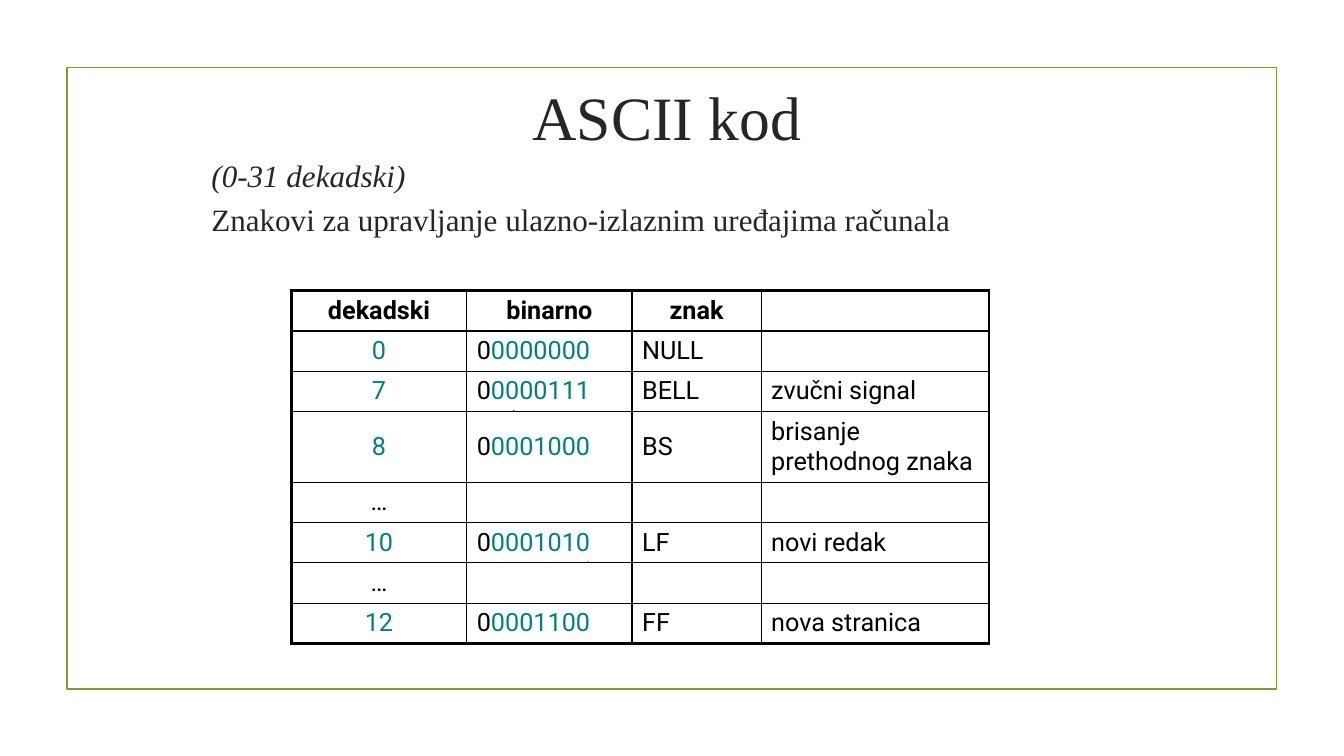
from lxml import etree
from pptx import Presentation
from pptx.dml.color import RGBColor
from pptx.enum.shapes import MSO_SHAPE as Shape
from pptx.enum.text import MSO_ANCHOR as Anchor, PP_ALIGN as Align
from pptx.oxml.ns import qn
from pptx.util import Pt

BLACK, INK, TEAL, OLIVE = "000000", "262626", "008080", "83992A"
SERIF, SANS = "Times New Roman", "Roboto"
COLUMN_WIDTHS = [125.3, 118.1, 92.2, 162.7]
ROW_HEIGHT, TWO_LINE_HEIGHT = 28.4, 50
HEADER = ["dekadski", "binarno", "znak", ""]
CODES = [
    ("0", "00000000", "NULL", ""),
    ("7", "00000111", "BELL", "zvučni signal"),
    ("8", "00001000", "BS", "brisanje prethodnog znaka"),
    ("…", "", "", ""),
    ("10", "00001010", "LF", "novi redak"),
    ("…", "", "", ""),
    ("12", "00001100", "FF", "nova stranica"),
]
SPECKS = [(366.5, 293), (419.8, 401)]


def rgb(value):
    """Turn a hex string into a colour."""
    return RGBColor.from_string(value)


def add_run(paragraph, text, font, size, color, bold=False, italic=False):
    """Append one formatted run to a paragraph."""
    run = paragraph.add_run()
    run.text = text
    run.font.name, run.font.size = font, Pt(size)
    run.font.bold, run.font.italic = bold, italic
    run.font.color.rgb = rgb(color)


def add_rectangle(slide, left, top, width, height, fill=None, line=None):
    """Draw a rectangle with an optional fill and outline."""
    box = slide.shapes.add_shape(Shape.RECTANGLE, Pt(left), Pt(top), Pt(width), Pt(height))
    box.shadow.inherit = False
    if fill:
        box.fill.solid()
        box.fill.fore_color.rgb = rgb(fill)
    else:
        box.fill.background()
    if line:
        box.line.color.rgb = rgb(line)
        box.line.width = Pt(1.25)
    else:
        box.line.fill.background()


def add_text(slide, left, top, width, height, lines, size, align=Align.LEFT, anchor=Anchor.TOP):
    """Place a text box whose lines are (text, italic) pairs."""
    frame = slide.shapes.add_textbox(Pt(left), Pt(top), Pt(width), Pt(height)).text_frame
    frame.word_wrap = True
    frame.vertical_anchor = anchor
    for index, (text, italic) in enumerate(lines):
        paragraph = frame.add_paragraph() if index else frame.paragraphs[0]
        paragraph.alignment = align
        if index:
            paragraph.space_before = Pt(5)
        add_run(paragraph, text, SERIF, size, INK, italic=italic)


def set_borders(cell, widths):
    """Give a cell black left, right, top and bottom borders."""
    properties = cell._tc.get_or_add_tcPr()
    for index, (side, width) in enumerate(zip("LRTB", widths)):
        border = etree.Element(qn(f"a:ln{side}"), w=str(Pt(width)))
        fill = etree.SubElement(border, qn("a:solidFill"))
        etree.SubElement(fill, qn("a:srgbClr"), val=BLACK)
        properties.insert(index, border)


def cell_runs(row, column, text):
    """Split a cell's text into (text, colour) parts."""
    if row and column == 0 and text.isdigit():
        return [(text, TEAL)]
    if row and column == 1 and text:
        return [(text[0], BLACK), (text[1:], TEAL)]
    return [(text, BLACK)] if text else []


def add_code_table(slide, left, top):
    """Build the table of control characters."""
    rows = [HEADER, *CODES]
    heights = [TWO_LINE_HEIGHT if row[0] == "8" else ROW_HEIGHT for row in rows]
    table = slide.shapes.add_table(len(rows), len(HEADER), Pt(left), Pt(top),
                                   Pt(sum(COLUMN_WIDTHS)), Pt(sum(heights))).table
    table.first_row = table.horz_banding = False
    for column, width in zip(table.columns, COLUMN_WIDTHS):
        column.width = Pt(width)
    last_row, last_column = len(rows) - 1, len(HEADER) - 1
    for r, (texts, height) in enumerate(zip(rows, heights)):
        table.rows[r].height = Pt(height)
        for c, text in enumerate(texts):
            cell = table.cell(r, c)
            cell.fill.background()
            cell.vertical_anchor = Anchor.MIDDLE
            set_borders(cell, [2 if c == 0 else 1, 2 if c == last_column else 1,
                               2 if r <= 1 else 0.75, 2 if r in (0, last_row) else 0.75])
            paragraph = cell.text_frame.paragraphs[0]
            paragraph.alignment = Align.CENTER if r == 0 or c == 0 else Align.LEFT
            for part, color in cell_runs(r, c, text):
                add_run(paragraph, part, SANS, 18, color, bold=r == 0)


def main():
    """Build the ASCII slide."""
    deck = Presentation()
    deck.slide_width, deck.slide_height = Pt(960), Pt(540)
    slide = deck.slides.add_slide(deck.slide_layouts[6])
    add_rectangle(slide, 47.8, 48.2, 864, 444, line=OLIVE)
    add_text(slide, 32.4, 37.4, 888, 90, [("ASCII kod", False)], 44, Align.CENTER, Anchor.MIDDLE)
    add_text(slide, 144, 108, 631, 60, [
        ("(0-31 dekadski)", True),
        ("Znakovi za upravljanje ulazno-izlaznim uređajima računala", False),
    ], 22.2)
    add_code_table(slide, 208.1, 207.4)
    for left, top in SPECKS:
        add_rectangle(slide, left, top, 0.7, 0.7, fill=BLACK)
    deck.save("out.pptx")


if __name__ == "__main__":
    main()
